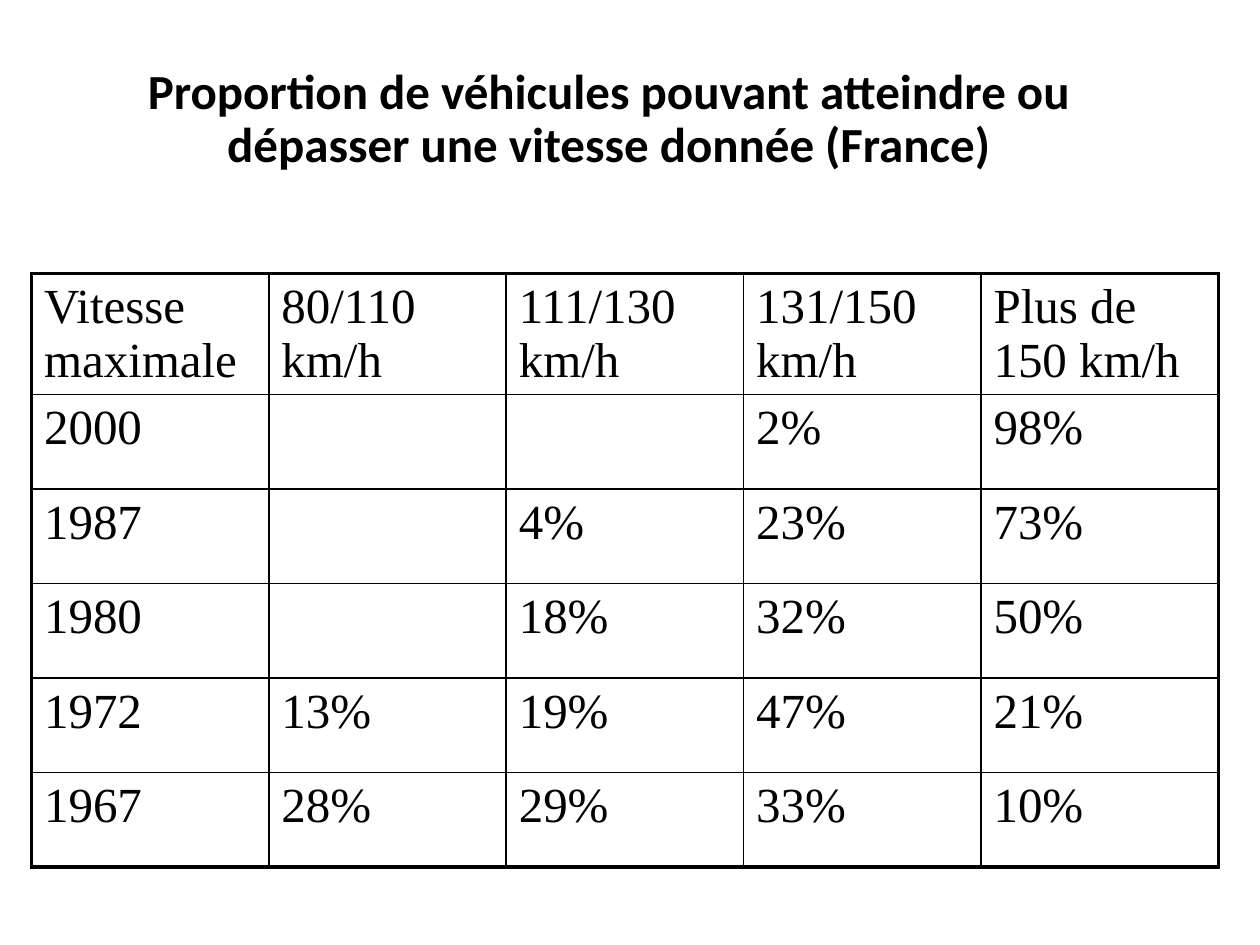
from lxml import etree
from pptx import Presentation
from pptx.dml.color import RGBColor
from pptx.enum.text import MSO_ANCHOR, PP_ALIGN
from pptx.oxml.ns import qn
from pptx.util import Inches, Pt

CENTER, LEFT = PP_ALIGN.CENTER, PP_ALIGN.LEFT
MIDDLE, TOP = MSO_ANCHOR.MIDDLE, MSO_ANCHOR.TOP
COLORS = {"text": "000000", "border": "000000"}
OUTER, INNER = 2.25, 1
TITLE = "Proportion de véhicules pouvant atteindre ou dépasser une vitesse donnée (France)"
SPEEDS = [
    ["Vitesse maximale", "80/110 km/h", "111/130 km/h", "131/150 km/h", "Plus de 150 km/h"],
    ["2000", "", "", "2%", "98%"],
    ["1987", "", "4%", "23%", "73%"],
    ["1980", "", "18%", "32%", "50%"],
    ["1972", "13%", "19%", "47%", "21%"],
    ["1967", "28%", "29%", "33%", "10%"],
]


def write(tf, text, font="Times New Roman", size=28, bold=False, align=LEFT, spacing=None):
    """Write one formatted paragraph into a text frame."""
    p = tf.paragraphs[0]
    p.alignment = align
    p.line_spacing = spacing
    r = p.add_run()
    r.text = text
    r.font.name, r.font.size, r.font.bold = font, Pt(size), bold
    r.font.color.rgb = RGBColor.from_string(COLORS["text"])


def set_borders(cell, widths):
    """Draw the borders of a cell from a dict of side to width in points."""
    tcPr = cell._tc.get_or_add_tcPr()
    for side, width in widths.items():
        ln = etree.SubElement(tcPr, qn(f"a:ln{side}"), w=str(Pt(width)))
        fill = etree.SubElement(ln, qn("a:solidFill"))
        etree.SubElement(fill, qn("a:srgbClr"), val=COLORS["border"])


def add_title(s, left, top, width, height):
    """Place the slide title in its box."""
    sp = s.shapes.title
    sp.left, sp.top, sp.width, sp.height = map(Inches, (left, top, width, height))
    tf = sp.text_frame
    tf.word_wrap = True
    tf.vertical_anchor = MIDDLE
    write(tf, TITLE, font="Calibri", bold=True, align=CENTER, spacing=0.9)


def add_speed_table(s, left, top, width, height):
    """Place the table of vehicle shares by year and top speed."""
    rows, cols = len(SPEEDS), len(SPEEDS[0])
    box = map(Inches, (left, top, width, height))
    table = s.shapes.add_table(rows, cols, *box).table
    table.first_row = table.horz_banding = False
    for i, values in enumerate(SPEEDS):
        for j, value in enumerate(values):
            cell = table.cell(i, j)
            set_borders(cell, {
                "L": OUTER if j == 0 else INNER,
                "R": OUTER if j == cols - 1 else INNER,
                "T": OUTER if i == 0 else INNER,
                "B": OUTER if i == rows - 1 else INNER,
            })
            cell.fill.background()
            cell.vertical_anchor = TOP
            if value:
                write(cell.text_frame, value)


def main():
    """Build the slide and save it."""
    prs = Presentation()
    prs.slide_width, prs.slide_height = Inches(10), Inches(7.5)
    s = prs.slides.add_slide(prs.slide_layouts[5])
    add_title(s, 0.58, 0.33, 8.5, 1.25)
    add_speed_table(s, 0.25, 2.17, 9.42, 4.5)
    prs.save("out.pptx")


if __name__ == "__main__":
    main()
